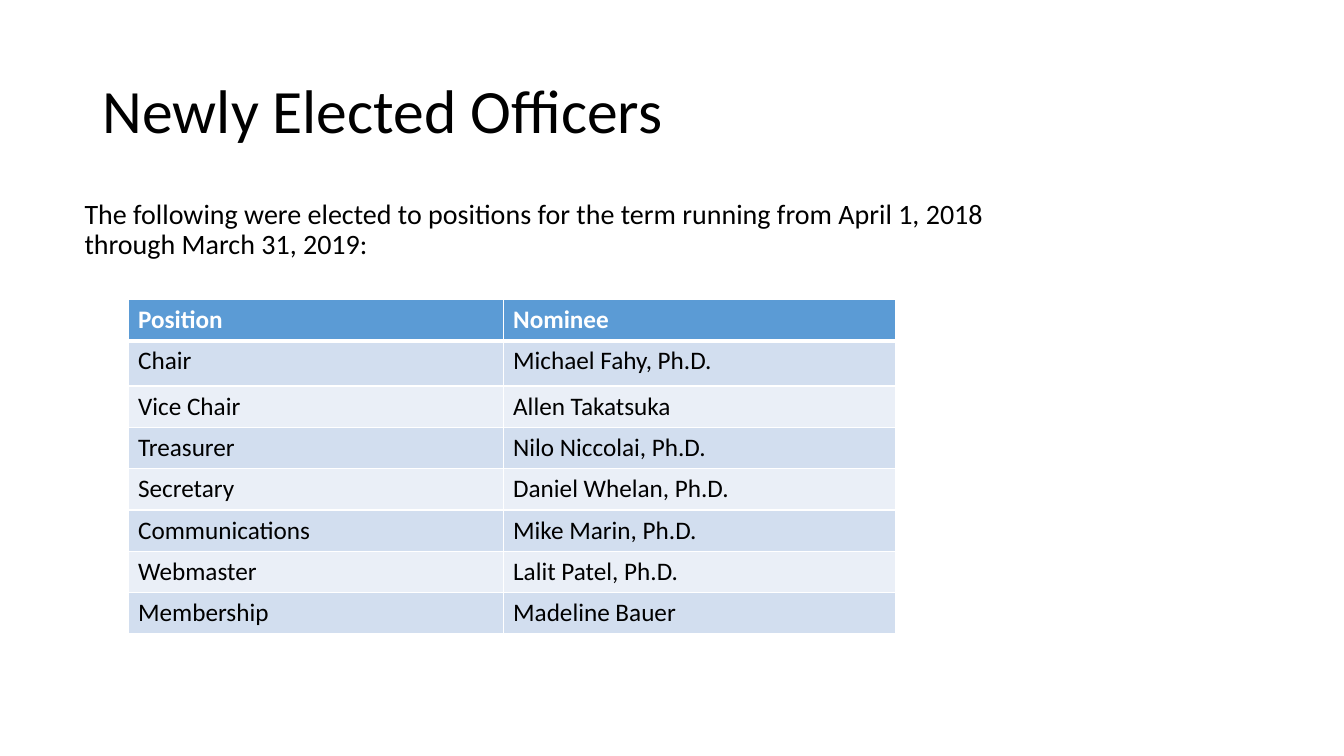
from lxml import etree
from pptx import Presentation
from pptx.dml.color import RGBColor
from pptx.enum.text import MSO_ANCHOR, PP_ALIGN
from pptx.oxml.ns import qn
from pptx.util import Inches, Pt

LEFT = PP_ALIGN.LEFT
TOP, MIDDLE = MSO_ANCHOR.TOP, MSO_ANCHOR.MIDDLE
TITLE_ONLY = 5
FONT = "Calibri"
COLORS = {
    "text": "000000",
    "white": "FFFFFF",
    "header": "5B9BD5",
    "band_dark": "D2DEEF",
    "band_light": "EAEFF7",
}
OFFICERS = [
    ("Position", "Nominee"),
    ("Chair", "Michael Fahy, Ph.D."),
    ("Vice Chair", "Allen Takatsuka"),
    ("Treasurer", "Nilo Niccolai, Ph.D."),
    ("Secretary", "Daniel Whelan, Ph.D."),
    ("Communications", "Mike Marin, Ph.D."),
    ("Webmaster", "Lalit Patel, Ph.D."),
    ("Membership", "Madeline Bauer"),
]
COLUMN_WIDTHS = (3.72, 3.89)
ROW_HEIGHT, CHAIR_ROW_HEIGHT = 0.41, 0.45


def color(name):
    return RGBColor.from_string(COLORS[name])


def write(tf, text, size, color_name="text", bold=False):
    """Put one run in the first paragraph and return the paragraph."""
    p = tf.paragraphs[0]
    p.alignment = LEFT
    r = p.add_run()
    r.text = text
    r.font.name = FONT
    r.font.size = Pt(size)
    r.font.bold = bold
    r.font.color.rgb = color(color_name)
    return p


def add_title(s, text):
    sp = s.shapes.title
    sp.left, sp.top = Inches(0.92), Inches(0.4)
    sp.width, sp.height = Inches(11.5), Inches(1.45)
    sp.text_frame.vertical_anchor = MIDDLE
    write(sp.text_frame, text, 44).line_spacing = 0.9


def add_intro(s, text):
    sp = s.shapes.add_textbox(Inches(0.74), Inches(1.94), Inches(9.4), Inches(1.03))
    tf = sp.text_frame
    tf.word_wrap = True
    tf.vertical_anchor = TOP
    p = write(tf, text, 20)
    p.line_spacing = 0.9
    p.space_before = Pt(10)


def set_borders(cell, bottom):
    """Draw white 1 pt borders, with the bottom one at its own width."""
    tc_pr = cell._tc.get_or_add_tcPr()
    sides = (("a:lnL", 1), ("a:lnR", 1), ("a:lnT", 1), ("a:lnB", bottom))
    for i, (tag, width) in enumerate(sides):
        ln = etree.Element(qn(tag), w=str(Pt(width)))
        fill = etree.SubElement(ln, qn("a:solidFill"))
        etree.SubElement(fill, qn("a:srgbClr"), val=COLORS["white"])
        tc_pr.insert(i, ln)


def add_officer_table(s):
    heights = [ROW_HEIGHT] * len(OFFICERS)
    heights[1] = CHAIR_ROW_HEIGHT
    frame = s.shapes.add_table(
        len(OFFICERS), len(COLUMN_WIDTHS), Inches(1.27), Inches(2.97),
        Inches(sum(COLUMN_WIDTHS)), Inches(sum(heights)))
    table = frame.table
    for column, width in zip(table.columns, COLUMN_WIDTHS):
        column.width = Inches(width)
    for i, (row, height, texts) in enumerate(zip(table.rows, heights, OFFICERS)):
        row.height = Inches(height)
        header = i == 0
        band = "band_dark" if i % 2 else "band_light"
        for cell, text in zip(row.cells, texts):
            cell.fill.solid()
            cell.fill.fore_color.rgb = color("header" if header else band)
            set_borders(cell, bottom=3 if i == 0 else 1)
            write(cell.text_frame, text, 18, "white" if header else "text", header)


def main():
    prs = Presentation()
    prs.slide_width, prs.slide_height = Inches(13.33), Inches(7.5)
    s = prs.slides.add_slide(prs.slide_layouts[TITLE_ONLY])
    add_title(s, "Newly Elected Officers")
    add_intro(s, "The following were elected to positions for the term running "
                 "from April 1, 2018 through March 31, 2019:")
    add_officer_table(s)
    prs.save("out.pptx")


if __name__ == "__main__":
    main()
